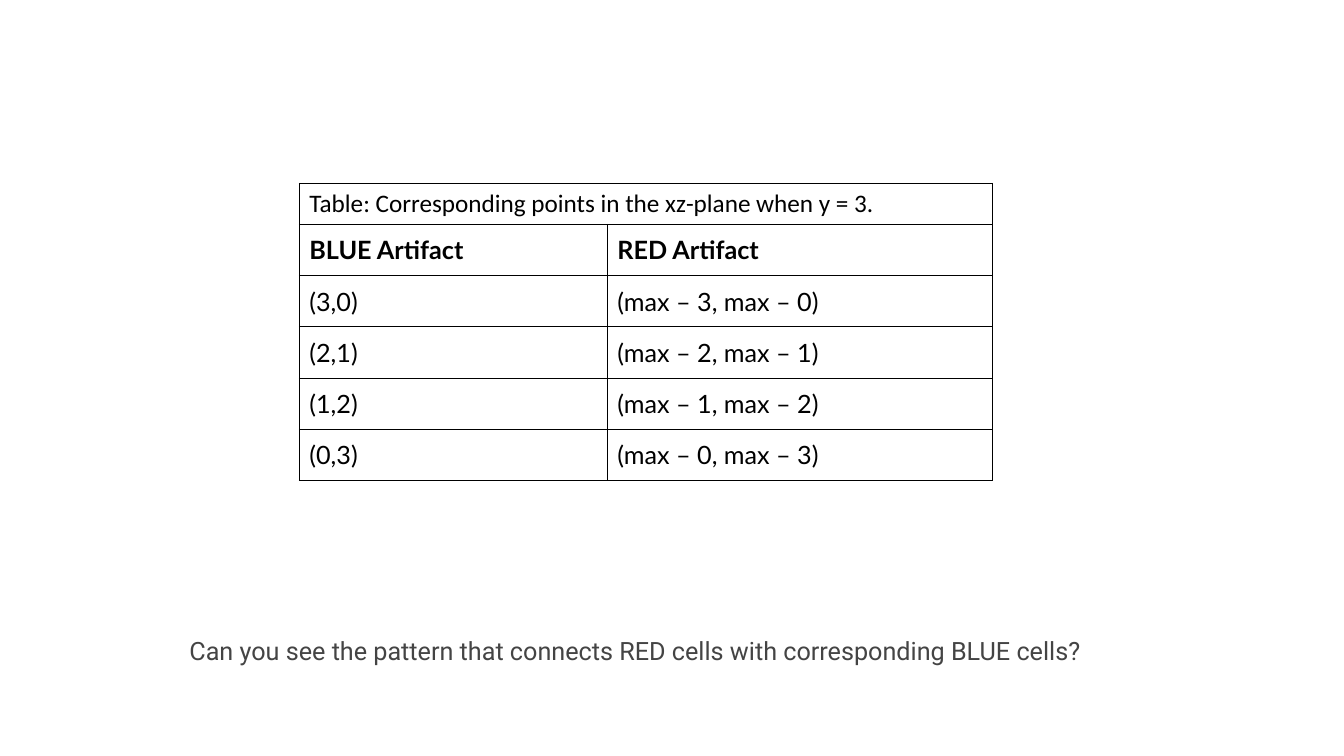
import pptx
import pptx.util
import pptx.dml.color
import pptx.enum.text
import pptx.oxml
import pptx.oxml.ns

Pt = pptx.util.Pt
RGB = pptx.dml.color.RGBColor
BLACK = RGB(0, 0, 0)
WHITE = RGB(255, 255, 255)
GRAY = RGB(0x44, 0x44, 0x44)

CAPTION = "Table: Corresponding points in the xz-plane when y = 3."
HEADS = ("BLUE Artifact", "RED Artifact")
TOP = 3
QUERY = "Can you see the pattern that connects RED cells with corresponding BLUE cells?"


def style(para, face, color, bold=False):
    font = para.font
    font.name, font.size, font.bold = face, Pt(18), bold
    font.color.rgb = color


def border(cell):
    """Draw a thin black line on all four sides of the cell."""
    props = cell._tc.get_or_add_tcPr()
    for spot, side in enumerate("LRTB"):
        props.insert(spot, pptx.oxml.parse_xml(
            f'<a:ln{side} {pptx.oxml.ns.nsdecls("a")} w="{Pt(0.75)}"><a:solidFill>'
            f'<a:srgbClr val="{BLACK}"/></a:solidFill></a:ln{side}>'))


def fill(cell, text, face, pad, bold=False):
    cell.text = text
    style(cell.text_frame.paragraphs[0], face, BLACK, bold)
    cell.vertical_anchor = pptx.enum.text.MSO_ANCHOR.MIDDLE
    cell.margin_left = cell.margin_right = Pt(7.2)
    cell.margin_top = cell.margin_bottom = Pt(pad)


def points(slide, left, top, width, height):
    """Place the table that pairs each blue point with its red one."""
    pairs = [HEADS] + [(f"({x},{TOP - x})", f"(max – {x}, max – {TOP - x})")
                       for x in range(TOP, -1, -1)]
    frame = slide.shapes.add_table(len(pairs) + 1, 2, Pt(left), Pt(top),
                                   Pt(width), Pt(height))
    table = frame.table
    first = 29.3
    for row in table.rows:
        row.height = Pt((height - first) / len(pairs))
    table.rows[0].height = Pt(first)
    split = 220
    table.columns[0].width = Pt(split)
    table.columns[1].width = Pt(width - split)
    for cell in table.iter_cells():
        cell.fill.solid()
        cell.fill.fore_color.rgb = WHITE
        border(cell)
    table.cell(0, 0).merge(table.cell(0, 1))
    fill(table.cell(0, 0), CAPTION, "Calibri", 3.6)
    for i, pair in enumerate(pairs, 1):
        for j, text in enumerate(pair):
            fill(table.cell(i, j), text, "Lato", 7.2, bold=i == 1)


def query(slide, left, top, width, height):
    box = slide.shapes.add_textbox(Pt(left), Pt(top), Pt(width), Pt(height))
    frame = box.text_frame
    frame.word_wrap = True
    frame.auto_size = pptx.enum.text.MSO_AUTO_SIZE.SHAPE_TO_FIT_TEXT
    frame.text = QUERY
    style(frame.paragraphs[0], "Roboto", GRAY)


def main():
    deck = pptx.Presentation()
    deck.slide_width, deck.slide_height = Pt(960), Pt(540)
    slide = deck.slides.add_slide(deck.slide_layouts[6])
    points(slide, 213.8, 131, 495.4, 212.3)
    query(slide, 128.2, 450, 666.7, 29)
    deck.save("out.pptx")


if __name__ == "__main__":
    main()
